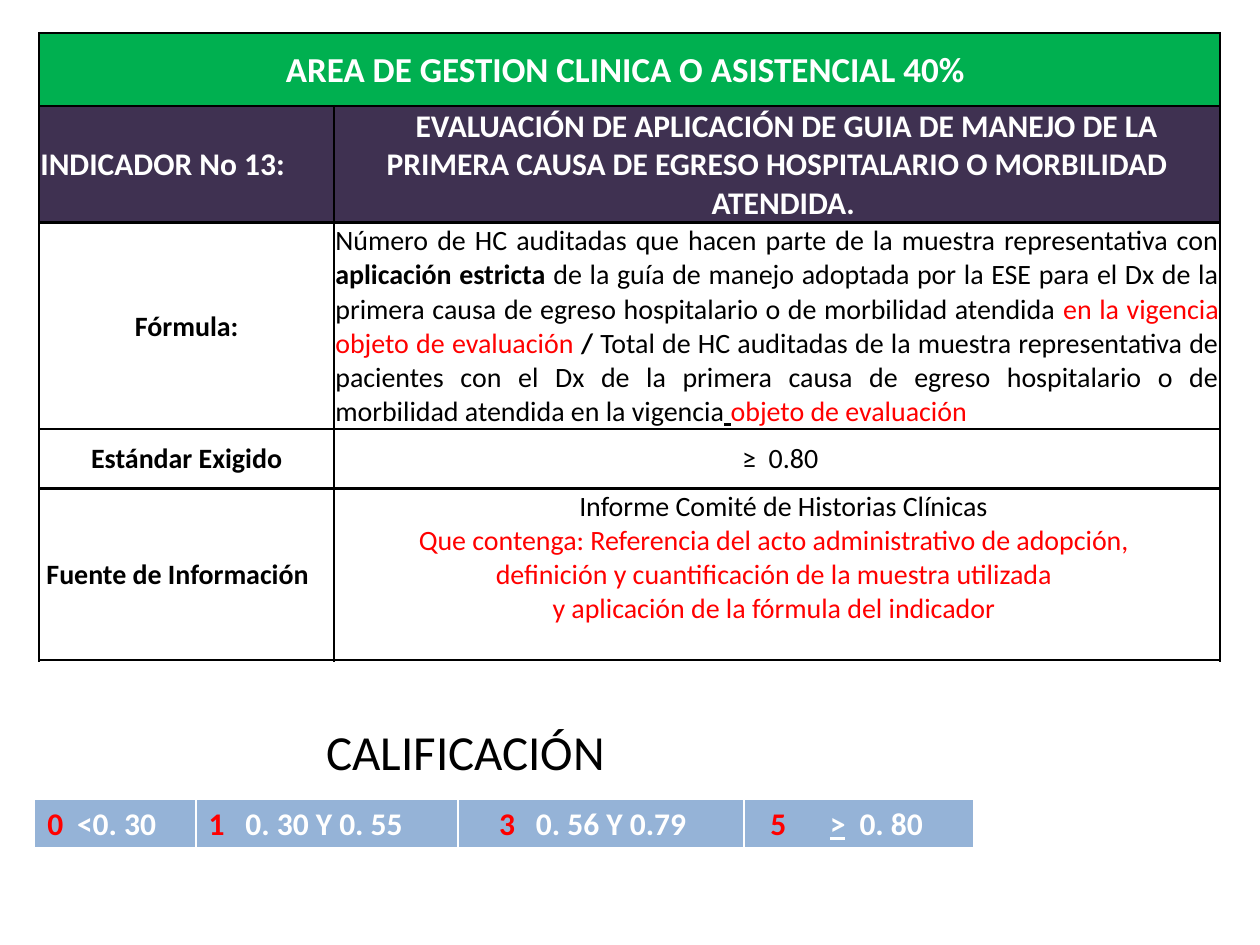
from pptx import Presentation
from pptx.dml.color import RGBColor
from pptx.enum.text import MSO_ANCHOR, PP_ALIGN
from pptx.oxml.xmlchemy import OxmlElement
from pptx.util import Pt

LEFT, CENTER, JUSTIFY = PP_ALIGN.LEFT, PP_ALIGN.CENTER, PP_ALIGN.JUSTIFY
TOP, MIDDLE = MSO_ANCHOR.TOP, MSO_ANCHOR.MIDDLE
FONT = "Calibri"
BLACK, WHITE, RED = "000000", "FFFFFF", "FF0000"
GREEN, PURPLE, BLUE = "00B050", "3F3151", "95B3D7"
SIDES = ("L", "R", "T", "B")
INDICATOR_MARGINS = {"margin_left": 0.7, "margin_right": 0.7, "margin_top": 0.7, "margin_bottom": 0}


def rgb(color):
    return RGBColor.from_string(color)


def run(text, **formats):
    return text, formats


def line(*runs, align=CENTER, indent=0, tabs=()):
    return {"runs": runs, "align": align, "indent": indent, "tabs": tabs}


def add_child(parent, tag, **attributes):
    child = OxmlElement(tag)
    for name, value in attributes.items():
        child.set(name, str(value))
    parent.append(child)
    return child


def write_lines(frame, lines, **defaults):
    for index, content in enumerate(lines):
        para = frame.paragraphs[0] if index == 0 else frame.add_paragraph()
        para.alignment = content["align"]
        properties = para._p.get_or_add_pPr()
        if content["indent"]:
            properties.set("marL", str(Pt(content["indent"])))
        if content["tabs"]:
            tab_list = add_child(properties, "a:tabLst")
            for position in content["tabs"]:
                add_child(tab_list, "a:tab", pos=Pt(position), algn="l")
        for text, formats in content["runs"]:
            span = para.add_run()
            span.text = text
            values = {"name": FONT, "bold": False, "underline": False, "color": BLACK}
            values.update(defaults)
            values.update(formats)
            span.font.color.rgb = rgb(values.pop("color"))
            span.font.size = Pt(values.pop("size"))
            for name, value in values.items():
                setattr(span.font, name, value)


def set_borders(cell, color, widths):
    """Draw the four cell borders; they must precede the fill."""
    properties = cell._tc.get_or_add_tcPr()
    for side, width in zip(SIDES, widths):
        border = add_child(properties, f"a:ln{side}", w=Pt(width))
        fill = add_child(border, "a:solidFill")
        add_child(fill, "a:srgbClr", val=color)


def format_cell(cell, fill, anchor, margins):
    if fill:
        cell.fill.solid()
        cell.fill.fore_color.rgb = rgb(fill)
    else:
        cell.fill.background()
    cell.vertical_anchor = anchor
    for name, value in margins.items():
        setattr(cell, name, Pt(value))


def add_grid(page, left, top, widths, heights):
    frame = page.shapes.add_table(len(heights), len(widths), Pt(left), Pt(top),
                                  Pt(sum(widths)), Pt(sum(heights)))
    table = frame.table
    table.first_row = table.horz_banding = False
    for column, width in zip(table.columns, widths):
        column.width = Pt(width)
    for row, height in zip(table.rows, heights):
        row.height = Pt(height)
    return table


def add_indicator_table(page):
    formula = line(
        run("Número de HC auditadas que hacen parte de la muestra representativa con "),
        run("aplicación estricta ", bold=True),
        run("de la guía de manejo adoptada por la ESE para el Dx de la primera causa de "
            "egreso hospitalario o de morbilidad atendida "),
        run("en la vigencia objeto de evaluación ", color=RED),
        run("/", bold=True),
        run(" Total de HC auditadas de la muestra representativa de pacientes con el Dx de la "
            "primera causa de egreso hospitalario o de morbilidad atendida en la vigencia"),
        run(" ", underline=True),
        run("objeto de evaluación ", color=RED),
        run("\t", color=RED, underline=True),
        align=JUSTIFY, tabs=(433,))
    indicator = [
        line(run("EVALUACIÓN DE APLICACIÓN DE GUIA DE MANEJO DE LA"), indent=11),
        line(run("PRIMERA CAUSA DE EGRESO HOSPITALARIO O MORBILIDAD")),
        line(run("ATENDIDA."), indent=7)]
    source = [
        line(run("Informe Comité de Historias Clínicas "), indent=11),
        line(run("Que contenga: Referencia del acto administrativo de adopción, ", color=RED)),
        line(run("definición y cuantificación de la muestra utilizada ", color=RED)),
        line(run("y aplicación de la fórmula del indicador ", color=RED))]
    heading = {"size": 18, "color": WHITE, "bold": True}
    label, body = {"size": 16, "bold": True}, {"size": 16}
    # Each row: fill, then (lines, text format, anchor) for every cell.
    rows = [
        (GREEN, [([line(run("AREA DE GESTION CLINICA O ASISTENCIAL 40% "))],
                  {**heading, "size": 20}, MIDDLE), ([], heading, MIDDLE)]),
        (PURPLE, [([line(run("INDICADOR No 13:"), align=LEFT)], heading, MIDDLE),
                  (indicator, heading, MIDDLE)]),
        (None, [([line(run("Fórmula:"))], label, MIDDLE), ([formula], body, MIDDLE)]),
        (None, [([line(run("Estándar Exigido"))], label, MIDDLE),
                ([line(run(" ≥  0.80"))], body, MIDDLE)]),
        (None, [([line(run("Fuente de Información"), align=LEFT, indent=3.5)], label, MIDDLE),
                (source, body, TOP)])]

    table = add_grid(page, 22.4, 18.9, (168.6, 506.2), (41.7, 66.5, 118, 33.8, 98.3))
    table.cell(0, 0).merge(table.cell(0, 1))
    for row, (fill, cells) in enumerate(rows):
        for column, (lines, formats, anchor) in enumerate(cells):
            cell = table.cell(row, column)
            set_borders(cell, BLACK, (1.5,) * 4)
            format_cell(cell, fill, anchor, INDICATOR_MARGINS)
            write_lines(cell.text_frame, lines, **formats)


def add_score_title(page):
    box = page.shapes.add_textbox(Pt(178.6), Pt(409), Pt(175), Pt(41))
    box.text_frame.word_wrap = False
    write_lines(box.text_frame, [line(run("CALIFICACIÓN"))], size=28)


def add_score_table(page):
    # Each score: left margin, tab stops, score, range.
    scores = [
        (7.2, (17,), "0", [run("\t<0. 30")]),
        (7.2, (21,), "1", [run("\t0. 30 Y 0. 55")]),
        (23.5, (21,), "3", [run("\t0. 56 Y 0.79")]),
        (15, (34, 51), "5", [run("\t"), run(">", underline=True), run("\t0. 80")])]
    table = add_grid(page, 19.8, 456.5, (92.2, 149.8, 163.4, 131), (28.8,))
    for cell, (margin, tabs, score, limits) in zip(table.rows[0].cells, scores):
        set_borders(cell, WHITE, (1, 1, 1, 3))
        format_cell(cell, BLUE, TOP, {"margin_left": margin})
        content = line(run(score, color=RED), *limits, align=LEFT, tabs=tabs)
        write_lines(cell.text_frame, [content], size=18, color=WHITE, bold=True)


def main():
    deck = Presentation()
    deck.slide_width, deck.slide_height = Pt(720), Pt(540)
    page = deck.slides.add_slide(deck.slide_layouts[6])
    add_indicator_table(page)
    add_score_title(page)
    add_score_table(page)
    deck.save("out.pptx")


if __name__ == "__main__":
    main()
